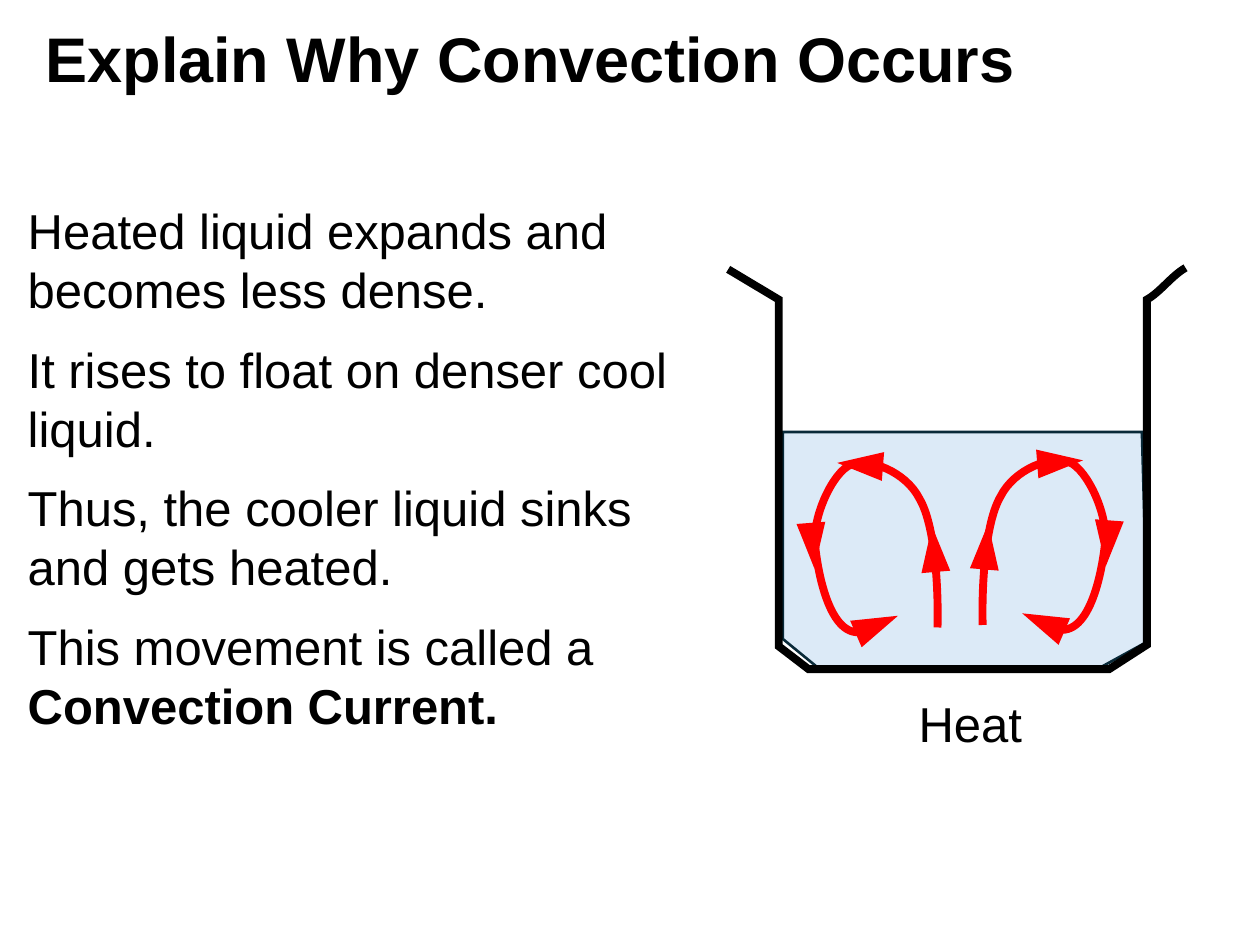
"""Build a slide explaining convection with a heated beaker of liquid."""
import lxml.etree
import pptx
import pptx.dml.color
import pptx.enum.shapes
import pptx.enum.text
import pptx.oxml.ns
import pptx.util

Cm = pptx.util.Cm
Pt = pptx.util.Pt
qn = pptx.oxml.ns.qn

TITLE = "Explain Why Convection Occurs"
EXPLANATION = [
    [("Heated liquid expands and becomes less dense.", False)],
    [("It rises to float on denser cool liquid.", False)],
    [("Thus, the cooler liquid sinks and gets heated.", False)],
    [("This movement is called a ", False), ("Convection Current.", True)],
]
BLACK, RED, WATER_BLUE, WATER_EDGE = "000000", "FF0000", "DCEAF7", "092A39"

WATER = [
    [(15.78, 8.71)], [(15.78, 12.88)], [(16.49, 13.46)], [(22.12, 13.49)],
    [(23.14, 12.93)], [(23.02, 8.71)], [(15.78, 8.71)],
]
BEAKER = [
    [(14.68, 5.43)], [(15.7, 6.04)], [(15.7, 13.03)], [(16.3, 13.49)],
    [(22.36, 13.49)], [(23.12, 13.0)], [(23.12, 6.04)],
    [(23.39, 5.89), (23.62, 5.56), (23.9, 5.4)],
]
CURRENT = [
    [(19.81, 12.6)],
    [(19.79, 11.79), (19.86, 10.54), (20.17, 10.01)],
    [(20.45, 9.45), (21.21, 9.17), (21.56, 9.32)],
    [(21.92, 9.47), (22.33, 10.36), (22.28, 10.92)],
    [(22.23, 11.46), (21.97, 12.98), (21.21, 12.65)],
]
ARROWHEADS = [
    (19.88, 11.05, 4.8), (21.34, 9.32, 85.5),
    (22.33, 10.92, 184.4), (21.06, 12.56, 293.4),
]
ARROWHEAD_WIDTH, ARROWHEAD_HEIGHT = 0.51, 0.81
MIRROR_SUM, MIRROR_DROP = 38.71, 0.05


def rgb(value):
    return pptx.dml.color.RGBColor.from_string(value)


def add_text(slide, box, paragraphs, size, bold=False, after=0, spacing=None,
             wrap=True, anchor=pptx.enum.text.MSO_ANCHOR.TOP):
    frame = slide.shapes.add_textbox(*(Cm(side) for side in box)).text_frame
    frame.word_wrap = wrap
    frame.auto_size = pptx.enum.text.MSO_AUTO_SIZE.SHAPE_TO_FIT_TEXT
    frame.vertical_anchor = anchor
    for index, pieces in enumerate(paragraphs):
        paragraph = frame.add_paragraph() if index else frame.paragraphs[0]
        paragraph.space_after = Pt(after)
        paragraph.line_spacing = spacing
        for words, emphasis in pieces:
            run = paragraph.add_run()
            run.text = words
            run.font.name = "Arial"
            run.font.size = Pt(size)
            run.font.bold = bold or emphasis
            run.font.color.rgb = rgb(BLACK)


def paint(shape, edge, width, fill=None):
    shape.shadow.inherit = False
    if fill:
        shape.fill.solid()
        shape.fill.fore_color.rgb = rgb(fill)
    else:
        shape.fill.background()
    shape.line.color.rgb = rgb(edge)
    shape.line.width = Pt(width)
    outline = shape.element.spPr.find(qn("a:ln"))
    lxml.etree.SubElement(outline, qn("a:miter")).set("lim", "800000")


def bend(segment, controls, left, top):
    segment.clear()
    segment.tag = qn("a:cubicBezTo")
    for x, y in controls:
        point = lxml.etree.SubElement(segment, qn("a:pt"))
        point.set("x", str(Cm(x) - left))
        point.set("y", str(Cm(y) - top))


def add_outline(group, steps, edge, width, fill=None):
    start, *knots = [(Cm(x), Cm(y)) for x, y in (step[-1] for step in steps)]
    builder = group.shapes.build_freeform(*start)
    builder.add_line_segments(knots, close=fill is not None)
    outline = builder.convert_to_shape()
    segments = list(outline.element.spPr.iter(qn("a:lnTo")))
    for segment, step in zip(segments, steps[1:]):
        if len(step) == 3:
            bend(segment, step, outline.left, outline.top)
    paint(outline, edge, width, fill)


def add_current(slide, mirrored):
    def place(x, y):
        return (MIRROR_SUM - x, y + MIRROR_DROP) if mirrored else (x, y)

    group = slide.shapes.add_group_shape()
    route = [[place(x, y) for x, y in step] for step in CURRENT]
    add_outline(group, route, RED, 4.5)
    for x, y, angle in ARROWHEADS:
        x, y = place(x, y)
        arrowhead = group.shapes.add_shape(
            pptx.enum.shapes.MSO_SHAPE.ISOSCELES_TRIANGLE,
            Cm(x - ARROWHEAD_WIDTH / 2), Cm(y - ARROWHEAD_HEIGHT / 2),
            Cm(ARROWHEAD_WIDTH), Cm(ARROWHEAD_HEIGHT))
        arrowhead.rotation = 360 - angle if mirrored else angle
        paint(arrowhead, RED, 1.5, RED)


def main():
    deck = pptx.Presentation()
    deck.slide_width, deck.slide_height = Cm(25.4), Cm(19.05)
    slide = deck.slides.add_slide(deck.slide_layouts[6])

    add_text(slide, (0.31, 3.92, 13.64, 11.13), EXPLANATION, 28, after=12)
    vessel = slide.shapes.add_group_shape()
    add_outline(vessel, WATER, WATER_EDGE, 1.5, WATER_BLUE)
    add_outline(vessel, BEAKER, BLACK, 4.5)
    add_text(slide, (18.27, 13.86, 2.62, 1.45), [[("Heat", False)]], 28, wrap=False)
    for mirrored in (False, True):
        add_current(slide, mirrored)
    add_text(slide, (0.67, 0.43, 24.23, 1.65), [[(TITLE, True)]], 36, bold=True,
             spacing=0.9, anchor=pptx.enum.text.MSO_ANCHOR.MIDDLE)
    deck.save("out.pptx")


if __name__ == "__main__":
    main()
